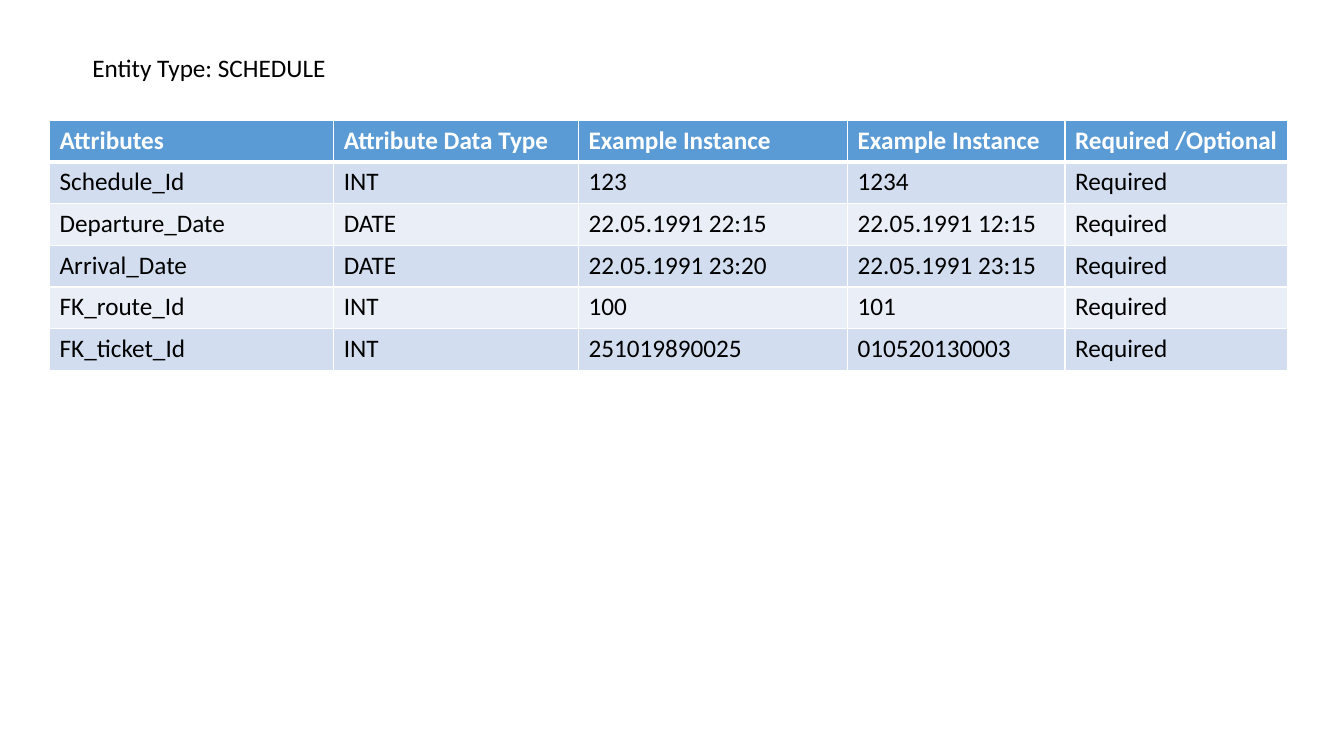
from lxml.etree import SubElement
from pptx import Presentation
from pptx.dml.color import RGBColor
from pptx.enum.text import MSO_AUTO_SIZE
from pptx.oxml.ns import qn
from pptx.util import Cm, Pt

COLORS = {
    "text": "000000",
    "header_text": "FFFFFF",
    "header": "5B9BD5",
    "odd_row": "D2DEEF",
    "even_row": "EAEFF7",
    "border": "FFFFFF",
}
ROWS = [
    ("Attributes", "Attribute Data Type", "Example Instance", "Example Instance", "Required /Optional"),
    ("Schedule_Id", "INT", "123", "1234", "Required"),
    ("Departure_Date", "DATE", "22.05.1991 22:15", "22.05.1991 12:15", "Required"),
    ("Arrival_Date", "DATE", "22.05.1991 23:20", "22.05.1991 23:15", "Required"),
    ("FK_route_Id", "INT", "100", "101", "Required"),
    ("FK_ticket_Id", "INT", "251019890025", "010520130003", "Required"),
]
COLUMN_WIDTHS = [7.16, 6.17, 6.78, 5.48, 5.61]
ROW_HEIGHT = 1.05


def write(text_frame, text, color, bold=False):
    text_frame.text = text
    font = text_frame.paragraphs[0].runs[0].font
    font.name = "Calibri"
    font.size = Pt(18)
    font.bold = bold
    font.color.rgb = RGBColor.from_string(COLORS[color])


def add_borders(cell, top, bottom):
    """Draw the four cell edges; must run before the cell gets its fill."""
    properties = cell._tc.get_or_add_tcPr()
    for edge, width in (("lnL", 1), ("lnR", 1), ("lnT", top), ("lnB", bottom)):
        line = SubElement(properties, qn(f"a:{edge}"), w=str(Pt(width)))
        fill = SubElement(line, qn("a:solidFill"))
        SubElement(fill, qn("a:srgbClr"), val=COLORS["border"])


prs = Presentation()
prs.slide_width = Cm(33.87)
prs.slide_height = Cm(19.05)
slide = prs.slides.add_slide(prs.slide_layouts[6])

entity_title = slide.shapes.add_textbox(Cm(2.08), Cm(1.2), Cm(6.45), Cm(1.03)).text_frame
entity_title.word_wrap = False
entity_title.auto_size = MSO_AUTO_SIZE.SHAPE_TO_FIT_TEXT
write(entity_title, "Entity Type: SCHEDULE", "text")

attributes = slide.shapes.add_table(
    len(ROWS), len(COLUMN_WIDTHS), Cm(1.25), Cm(3.03),
    Cm(sum(COLUMN_WIDTHS)), Cm(ROW_HEIGHT * len(ROWS)),
).table
for column, width in zip(attributes.columns, COLUMN_WIDTHS):
    column.width = Cm(width)

for r, values in enumerate(ROWS):
    is_header = r == 0
    attributes.rows[r].height = Cm(ROW_HEIGHT)
    row_fill = "header" if is_header else "odd_row" if r % 2 else "even_row"
    for c, value in enumerate(values):
        cell = attributes.cell(r, c)
        add_borders(cell, top=3 if r == 1 else 1, bottom=3 if is_header else 1)
        cell.fill.solid()
        cell.fill.fore_color.rgb = RGBColor.from_string(COLORS[row_fill])
        write(cell.text_frame, value, "header_text" if is_header else "text", bold=is_header)

prs.save("out.pptx")
